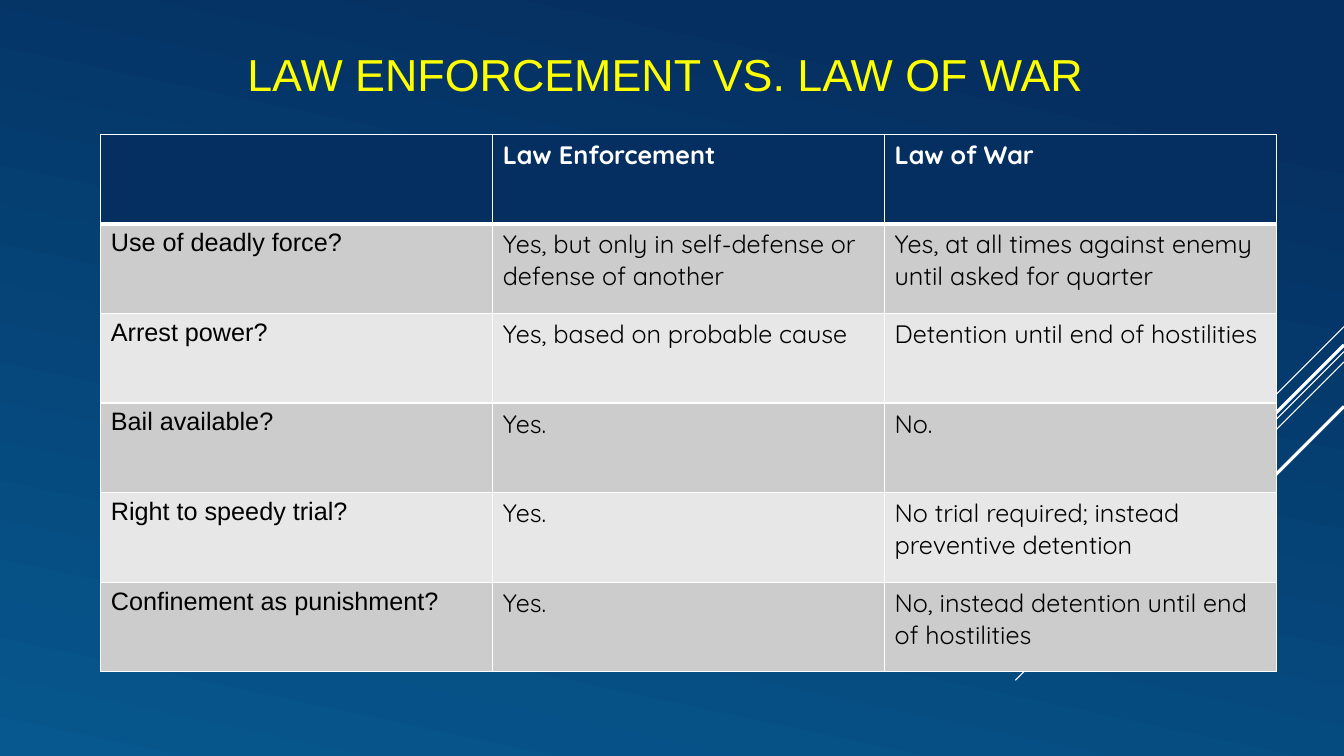
from dataclasses import dataclass
from lxml import etree
from pptx import Presentation
from pptx.dml.color import RGBColor
from pptx.enum.shapes import MSO_CONNECTOR
from pptx.enum.text import MSO_ANCHOR, PP_ALIGN
from pptx.oxml.ns import qn
from pptx.util import Cm, Pt

STRAIGHT = MSO_CONNECTOR.STRAIGHT
MIDDLE = MSO_ANCHOR.MIDDLE
CENTER = PP_ALIGN.CENTER


@dataclass(frozen=True)
class Theme:
    navy: str = "052F61"
    blue: str = "06588E"
    white: str = "FFFFFF"
    black: str = "000000"
    yellow: str = "FFFF00"
    dark: str = "CCCCCC"
    light: str = "E7E7E7"
    plain: str = "Arial"
    round: str = "Quicksand"
    title: int = 32
    body: int = 18


theme = Theme()


def style(para, face, size, color, bold=False):
    for run in para.runs:
        font = run.font
        font.name = face
        font.size = Pt(size)
        font.bold = bold
        font.color.rgb = RGBColor.from_string(color)


def border(cell, side, width):
    props = cell._tc.get_or_add_tcPr()
    line = etree.SubElement(props, qn("a:ln" + side), w=str(Pt(width)))
    fill = etree.SubElement(line, qn("a:solidFill"))
    etree.SubElement(fill, qn("a:srgbClr"), val=theme.white)


deck = Presentation()
deck.slide_width = Cm(33.87)
deck.slide_height = Cm(19.05)
slide = deck.slides.add_slide(deck.slide_layouts[6])

back = slide.background.fill
back.gradient()
back.gradient_angle = 258
for stop, place, color in zip(back.gradient_stops, (0.13, 1), (theme.navy, theme.blue)):
    stop.position = place
    stop.color.rgb = RGBColor.from_string(color)

streaks = [
    (8.23, 2.54, 0.75),
    (8.86, 8.28, 0.75),
    (9.12, 5.28, 0.75),
    (8.69, 4.85, 2.25),
    (10.24, 3.53, 2.25),
]
for top, reach, width in streaks:
    streak = slide.shapes.add_connector(
        STRAIGHT, Cm(33.87), Cm(top), Cm(33.87 - reach), Cm(top + reach))
    streak.line.width = Pt(width)
    streak.line.color.rgb = RGBColor.from_string(theme.white)
    etree.SubElement(streak._element.spPr, qn("a:effectLst"))

title = slide.shapes.add_textbox(Cm(3.38), Cm(0.76), Cm(27.1), Cm(2.21))
frame = title.text_frame
frame.word_wrap = True
frame.vertical_anchor = MIDDLE
frame.text = "LAW ENFORCEMENT VS. LAW OF WAR "
head = frame.paragraphs[0]
head.alignment = CENTER
style(head, theme.plain, theme.title, theme.yellow)

rows = [
    ("", "Law Enforcement", "Law of War"),
    ("Use of deadly force?", "Yes, but only in self-defense or defense of another",
     "Yes, at all times against enemy until asked for quarter"),
    ("Arrest power?", "Yes, based on probable cause", "Detention until end of hostilities"),
    ("Bail available?", "Yes.", "No."),
    ("Right to speedy trial?", "Yes.", "No trial required; instead preventive detention"),
    ("Confinement as punishment?", "Yes.", "No, instead detention until end of hostilities"),
]
table = slide.shapes.add_table(
    len(rows), len(rows[0]), Cm(2.54), Cm(3.38), Cm(29.63), Cm(13.55)).table
for r, row in enumerate(rows):
    top = r == 0
    shade = theme.navy if top else theme.dark if r % 2 else theme.light
    ink = theme.white if top else theme.black
    for c, text in enumerate(row):
        cell = table.cell(r, c)
        for side in "LRTB":
            thick = (r, side) in ((0, "B"), (1, "T"))
            border(cell, side, 3 if thick else 1)
        cell.fill.solid()
        cell.fill.fore_color.rgb = RGBColor.from_string(shade)
        cell.text_frame.text = text
        face = theme.round if c else theme.plain
        style(cell.text_frame.paragraphs[0], face, theme.body, ink, top)

deck.save("out.pptx")
